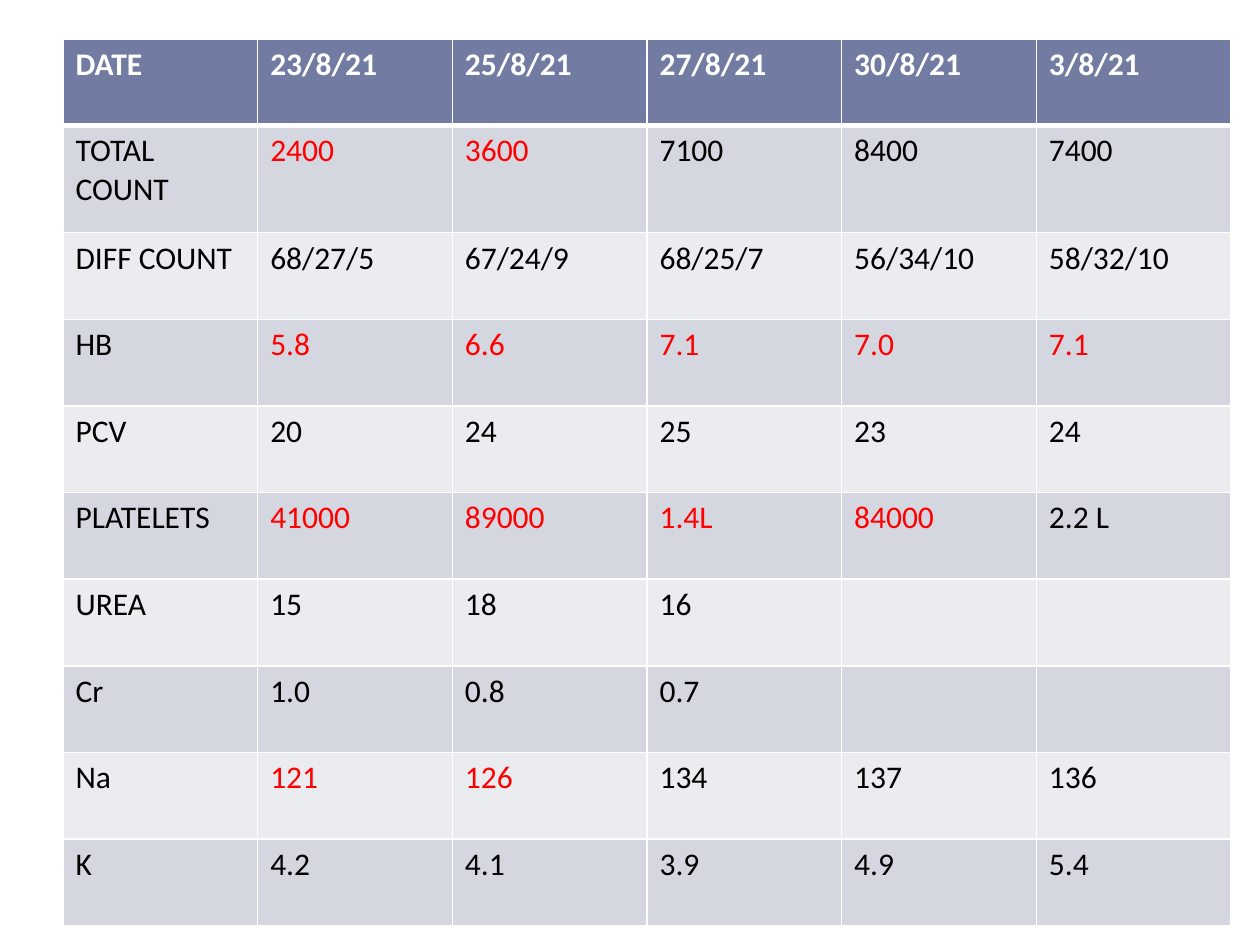
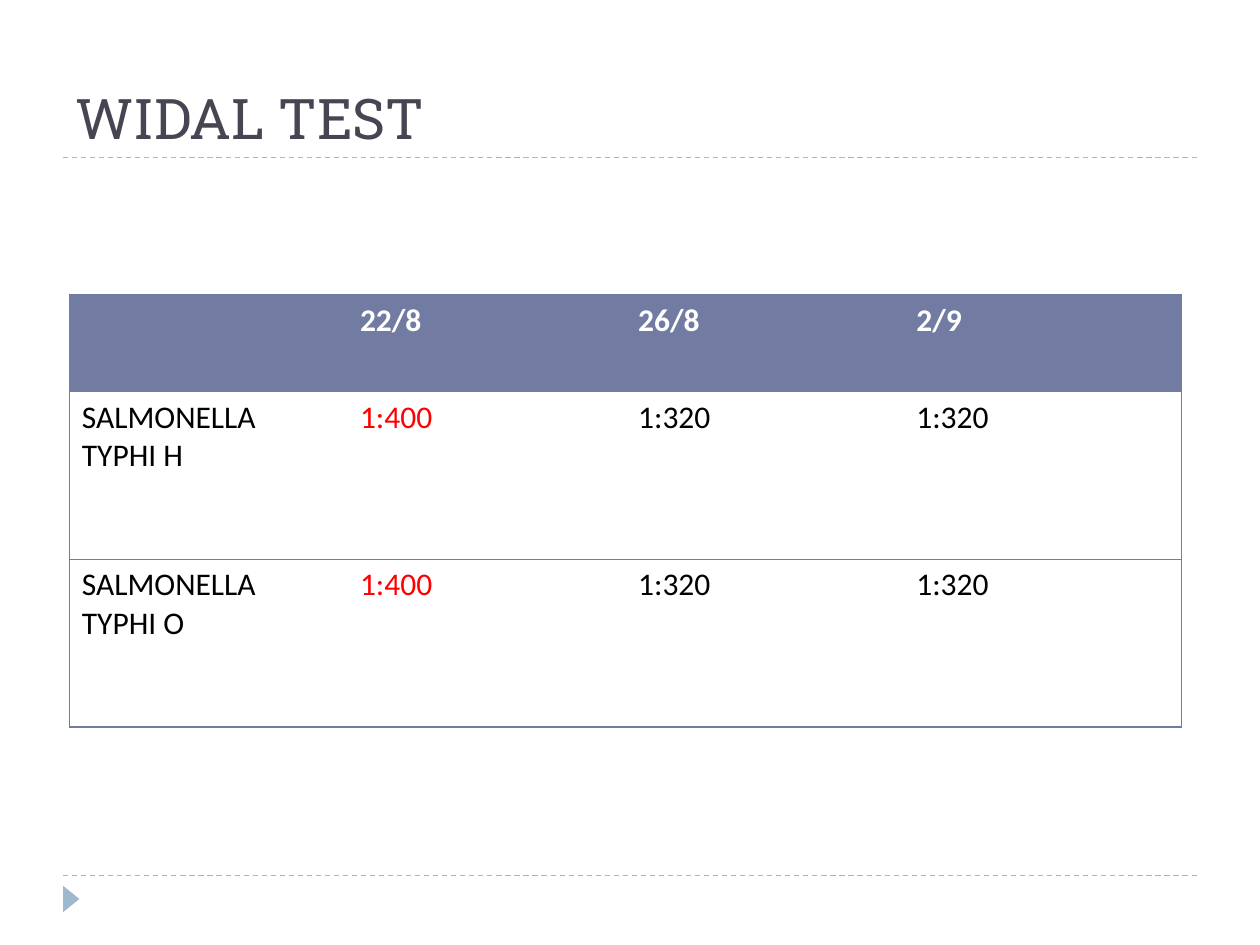
import pptx
import pptx.util
import pptx.dml.color
import pptx.enum.dml
import pptx.enum.shapes
import pptx.enum.text
import pptx.oxml
import pptx.oxml.ns
import lxml.etree

Inches, Pt = pptx.util.Inches, pptx.util.Pt
RGB = pptx.dml.color.RGBColor.from_string
qn = pptx.oxml.ns.qn

COLORS = {"header": "727CA3", "accent": "9FB8CD", "title": "464653",
          "band_dark": "D5D7E0", "band_light": "EBECF0",
          "text": "000000", "abnormal": "FF0000", "white": "FFFFFF"}
PLAIN_STYLE = "{2D5ABB26-0587-4C30-8999-92F81FD0307C}"
LEFT, RIGHT = 0.5, 9.5
TITLE_RULE, FOOTER_RULE = 1.25, 6.95


def set_border(cell, side, color, width):
    ln = lxml.etree.SubElement(cell._tc.get_or_add_tcPr(), qn(f"a:ln{side}"),
                               w=str(int(Pt(width))))
    fill = lxml.etree.SubElement(ln, qn("a:solidFill"))
    lxml.etree.SubElement(fill, qn("a:srgbClr"), val=COLORS[color])


def add_lab_table(slide, box, heights, header, results, bands, borders):
    """Each result is (label, number of leading abnormal values, values).

    borders(row, col) gives {side: (color, width)}; a band of None is unfilled.
    """
    rows = [("", 0, [])] + results
    frame = slide.shapes.add_table(len(rows), len(header), *map(Inches, box))
    table = frame.table
    table.first_row = table.horz_banding = False
    table._tbl.tblPr.find(qn("a:tableStyleId")).text = PLAIN_STYLE
    for column in table.columns:
        column.width = Inches(box[2] / len(header))
    for r, (label, abnormal, values) in enumerate(rows):
        table.rows[r].height = Inches(heights[r])
        texts = header if r == 0 else [label] + values
        band = "header" if r == 0 else bands[(r - 1) % len(bands)]
        for c in range(len(header)):
            cell = table.cell(r, c)
            edges = borders(r, c)
            for side in "LRTB":
                if side in edges:
                    set_border(cell, side, *edges[side])
            if band:
                cell.fill.solid()
                cell.fill.fore_color.rgb = RGB(COLORS[band])
            else:
                cell.fill.background()
            p = cell.text_frame.paragraphs[0]
            p.font.size = Pt(18)
            if c < len(texts) and texts[c]:
                run = p.add_run()
                run.text = texts[c]
                color = "white" if r == 0 else "abnormal" if 1 <= c <= abnormal else "text"
                for name, value in {"size": Pt(18), "name": "Calibri", "bold": r == 0}.items():
                    setattr(run.font, name, value)
                run.font.color.rgb = RGB(COLORS[color])


prs = pptx.Presentation()
prs.slide_width, prs.slide_height = Inches(10), Inches(7.5)
blood_slide = prs.slides.add_slide(prs.slide_layouts[6])
widal_slide = prs.slides.add_slide(prs.slide_layouts[5])

# Shared decoration: drawn once, then moved to the slide master
decoration = []
for y in (FOOTER_RULE, TITLE_RULE):
    rule = widal_slide.shapes.add_connector(
        pptx.enum.shapes.MSO_CONNECTOR.STRAIGHT,
        Inches(LEFT), Inches(y), Inches(RIGHT), Inches(y))
    rule.line.color.rgb = RGB(COLORS["accent"])
    rule.line.width = Pt(0.75)
    rule.line.dash_style = pptx.enum.dml.MSO_LINE.DASH
    lxml.etree.SubElement(rule._element.spPr, qn("a:effectLst"))
    decoration.append(rule)
marker = widal_slide.shapes.add_shape(
    pptx.enum.shapes.MSO_SHAPE.ISOSCELES_TRIANGLE,
    Inches(0.46), Inches(7.07), Inches(0.21), Inches(0.13))
marker.rotation = 90
marker.shadow.inherit = False
marker.fill.solid()
marker.fill.fore_color.rgb = RGB(COLORS["accent"])
marker.line.fill.background()
decoration.append(marker)
for number, sp in enumerate(decoration, start=101):
    sp._element.xpath(".//p:cNvPr")[0].set("id", str(number))
    prs.slide_master.shapes.element.append(sp._element)

# Slide 1: blood results
blood_header = ["DATE", "23/8/21", "25/8/21", "27/8/21", "30/8/21", "3/8/21"]
blood_results = [
    ("TOTAL COUNT", 2, ["2400", "3600", "7100", "8400", "7400"]),
    ("DIFF COUNT", 0, ["68/27/5", "67/24/9", "68/25/7", "56/34/10", "58/32/10"]),
    ("HB", 5, ["5.8", "6.6", "7.1", "7.0", "7.1"]),
    ("PCV", 0, ["20", "24", "25", "23", "24"]),
    ("PLATELETS", 4, ["41000", "89000", "1.4L", "84000", "2.2 L"]),
    ("UREA", 0, ["15", "18", "16"]),
    ("Cr", 0, ["1.0", "0.8", "0.7"]),
    ("Na", 2, ["121", "126", "134", "137", "136"]),
    ("K", 0, ["4.2", "4.1", "3.9", "4.9", "5.4"]),
]
blood_box = (LEFT, 0.31, 9.27, 7.04)
tall_row = 0.85
blood_heights = [(blood_box[3] - tall_row) / len(blood_results)] * (len(blood_results) + 1)
blood_heights[1] = tall_row


def blood_borders(r, c):
    edges = dict.fromkeys("LRTB", ("white", 1))
    if r == 0:
        edges["B"] = ("white", 3)
    elif r == 1:
        edges["T"] = ("white", 3)
    return edges


add_lab_table(blood_slide, blood_box, blood_heights, blood_header, blood_results,
              ["band_dark", "band_light"], blood_borders)

# Slide 2: Widal test
title = widal_slide.shapes.title
for name, value in {"left": LEFT, "top": 0.17, "width": RIGHT - LEFT, "height": 1.08}.items():
    setattr(title, name, Inches(value))
tf = title.text_frame
tf.text = "WIDAL TEST"
tf.vertical_anchor = pptx.enum.text.MSO_ANCHOR.BOTTOM
p = tf.paragraphs[0]
p.alignment = pptx.enum.text.PP_ALIGN.LEFT
font = p.runs[0].font
for name, value in {"size": Pt(32), "name": "Roboto Slab"}.items():
    setattr(font, name, value)
font.color.rgb = RGB(COLORS["title"])

widal_header = ["", "22/8", "26/8", "2/9"]
widal_results = [(f"SALMONELLA TYPHI {antigen}", 1, ["1:400", "1:320", "1:320"])
                 for antigen in "HO"]


def widal_borders(r, c):
    sides = "TB" + ("L" if c == 0 else "") + ("R" if c == len(widal_header) - 1 else "")
    return dict.fromkeys(sides, ("header", 0.75))


add_lab_table(widal_slide, (0.55, 2.34, 8.83, 3.44), [0.77, 1.33, 1.33],
              widal_header, widal_results, [None], widal_borders)

prs.save("out.pptx")
